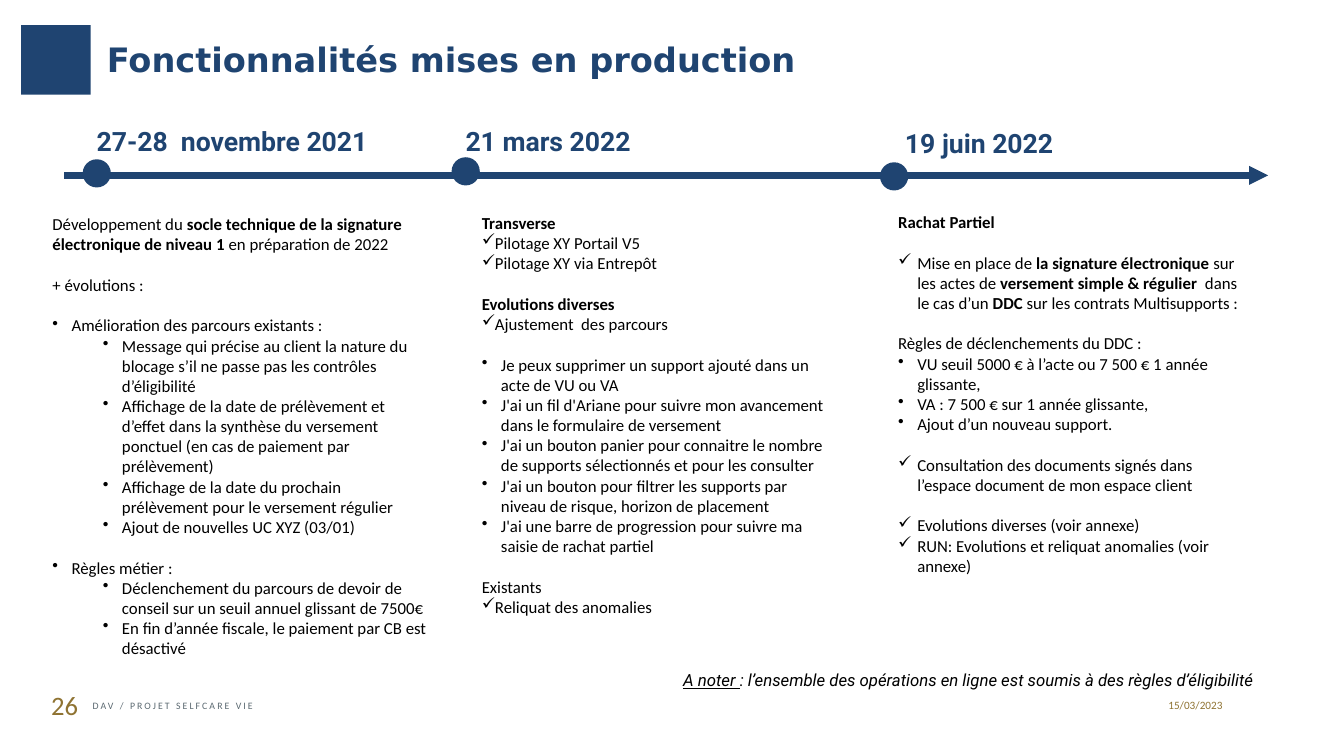
from dataclasses import dataclass

from lxml import etree
from pptx import Presentation
from pptx.dml.color import RGBColor
from pptx.enum.shapes import MSO_CONNECTOR as Conn, MSO_SHAPE as Shape
from pptx.enum.text import MSO_ANCHOR as Anchor, MSO_AUTO_SIZE as Fit, PP_ALIGN as Align
from pptx.oxml.ns import qn
from pptx.util import Inches, Pt

NAVY, GOLD, GREY, BLACK = "1F4471", "8F7332", "5B6971", "000000"
BODY, ACCENT = "Calibri", "Roboto"
CELL = 0.1  # grid cell in inches
COLS, ROWS = 133.33, 75
LINE_GAP = Pt(14.6)  # one empty body line
DOT = 2.8
AXIS = 17.4
TICK, BULLET = "✓", "•"


@dataclass
class Box:
    left: float
    top: float
    width: float
    height: float


@dataclass
class Line:
    text: str  # ** toggles bold
    bullet: str = ""
    left: float = 1.9
    hang: float = 1.9
    gap: bool = False


@dataclass
class Milestone:
    date: str
    date_box: Box
    dot_left: float
    dot_top: float
    body_box: Box
    lines: list[Line]


def g(cells: float) -> int:
    return Inches(cells * CELL)


def color(value: str) -> RGBColor:
    return RGBColor.from_string(value)


def place(sp, box: Box) -> None:
    sp.left, sp.top, sp.width, sp.height = g(box.left), g(box.top), g(box.width), g(box.height)


def style(p, size: float, face: str, ink: str, bold: bool = False) -> None:
    f = p.font
    f.size, f.name, f.bold = Pt(size), face, bold
    f.color.rgb = color(ink)


def frame(sp, dx: float, dy: float, anchor=Anchor.TOP):
    tf = sp.text_frame
    tf.word_wrap, tf.auto_size, tf.vertical_anchor = True, Fit.NONE, anchor
    tf.margin_left = tf.margin_right = g(dx)
    tf.margin_top = tf.margin_bottom = g(dy)
    return tf


def add_text(s, box: Box, dx: float = 1, dy: float = 0.5, anchor=Anchor.TOP):
    sp = s.shapes.add_textbox(g(box.left), g(box.top), g(box.width), g(box.height))
    return frame(sp, dx, dy, anchor)


def add_label(s, box: Box, text: str, size: float, face: str, ink: str, bold=False, **kw):
    p = add_text(s, box, **kw).paragraphs[0]
    p.add_run().text = text
    style(p, size, face, ink, bold)
    return p


def add_solid(s, kind, box: Box) -> None:
    sp = s.shapes.add_shape(kind, g(box.left), g(box.top), g(box.width), g(box.height))
    sp.shadow.inherit = False
    sp.fill.solid()
    sp.fill.fore_color.rgb = color(NAVY)
    sp.line.fill.background()


def add_body(s, box: Box, lines: list[Line]) -> None:
    tf = add_text(s, box, 1.8, 0.9)
    for i, line in enumerate(lines):
        p = tf.add_paragraph() if i else tf.paragraphs[0]
        if line.gap:
            p.space_before = LINE_GAP
        for j, part in enumerate(line.text.split("**")):
            if part:
                r = p.add_run()
                r.text = part
                if j % 2:
                    r.font.bold = True
        style(p, 12, BODY, BLACK)
        if line.bullet:
            pPr = p._p.get_or_add_pPr()
            pPr.set("marL", str(g(line.left)))
            pPr.set("indent", str(-g(line.hang)))
            bu = etree.Element(qn("a:buChar"), char=line.bullet)
            pPr.find(qn("a:defRPr")).addprevious(bu)


def dot(text: str, gap: bool = False) -> Line:
    return Line(text, BULLET, gap=gap)


def sub(text: str) -> Line:
    return Line(text, BULLET, left=6.9)


def tick(text: str, gap: bool = False) -> Line:
    return Line(text, TICK, gap=gap)


def flush_tick(text: str) -> Line:
    return Line(text, TICK, left=0, hang=3.8)


MILESTONES = [
    Milestone("27-28  novembre 2021", Box(8.6, 11.9, 36.5, 4.2), 8.2, 15.8, Box(3.4, 20.3, 40.9, 46.2), [
        Line("Développement du **socle technique de la signature électronique de niveau 1 **"
             "en préparation de 2022"),
        Line("+ évolutions :", gap=True),
        dot("Amélioration des parcours existants :", gap=True),
        sub("Message qui précise au client la nature du blocage s’il ne passe pas les contrôles d’éligibilité"),
        sub("Affichage de la date de prélèvement et d’effet dans la synthèse du versement ponctuel "
            "(en cas de paiement par prélèvement)"),
        sub("Affichage de la date du prochain prélèvement pour le versement régulier"),
        sub("Ajout de nouvelles UC XYZ (03/01)"),
        dot("Règles métier :", gap=True),
        sub("Déclenchement du parcours de devoir de conseil sur un seuil annuel glissant de 7500€"),
        sub("En fin d’année fiscale, le paiement par CB est désactivé"),
    ]),
    Milestone("21 mars 2022", Box(45.2, 11.9, 32.2, 4.2), 44.8, 15.6, Box(46, 20.2, 38.3, 42.2), [
        Line("**Transverse**"),
        flush_tick("Pilotage XY Portail V5"),
        flush_tick("Pilotage XY via Entrepôt"),
        Line("**Evolutions diverses**", gap=True),
        flush_tick("Ajustement  des parcours"),
        dot("Je peux supprimer un support ajouté dans un acte de VU ou VA", gap=True),
        dot("J'ai un fil d'Ariane pour suivre mon avancement dans le formulaire de versement"),
        dot("J'ai un bouton panier pour connaitre le nombre de supports sélectionnés et pour les consulter"),
        dot("J'ai un bouton pour filtrer les supports par niveau de risque, horizon de placement"),
        dot("J'ai une barre de progression pour suivre ma saisie de rachat partiel"),
        Line("Existants", gap=True),
        flush_tick("Reliquat des anomalies"),
    ]),
    Milestone("19 juin 2022", Box(88.8, 12.1, 38.7, 4.2), 87.3, 16.1, Box(87.3, 20.1, 38.3, 42.2), [
        Line("**Rachat Partiel**"),
        tick("Mise en place de **la signature électronique **sur les actes de "
             "**versement simple & régulier  **dans le cas d’un **DDC** sur les contrats Multisupports :",
             gap=True),
        Line("Règles de déclenchements du DDC :", gap=True),
        dot("VU seuil 5000 € à l’acte ou 7 500 € 1 année glissante,"),
        dot("VA : 7 500 € sur 1 année glissante,"),
        dot("Ajout d’un nouveau support."),
        tick("Consultation des documents signés dans l’espace document de mon espace client", gap=True),
        tick("Evolutions diverses (voir annexe)", gap=True),
        tick("RUN: Evolutions et reliquat anomalies (voir annexe)"),
    ]),
]


def main() -> None:
    prs = Presentation()
    prs.slide_width, prs.slide_height = g(COLS), g(ROWS)
    s = prs.slides.add_slide(prs.slide_layouts[5])

    # Title and its square
    add_solid(s, Shape.RECTANGLE, Box(2.1, 2.5, 6.9, 6.9))
    title = s.shapes.title
    place(title, Box(9.3, 2.4, 101.3, 6.9))
    p = frame(title, 1.3, 0.7, Anchor.MIDDLE).paragraphs[0]
    p.add_run().text = "Fonctionnalités mises en production"
    p.alignment = Align.LEFT
    style(p, 24, "DejaVu Sans", NAVY, True)

    # Timeline arrow
    axis = s.shapes.add_connector(Conn.STRAIGHT, g(6.4), g(AXIS), g(125.8), g(AXIS))
    axis.line.width = Pt(4.5)
    axis.line.color.rgb = color(NAVY)
    etree.SubElement(axis.line._get_or_add_ln(), qn("a:tailEnd"), type="triangle")
    etree.SubElement(axis._element.spPr, qn("a:effectLst"))

    # Milestones
    for m in MILESTONES:
        add_solid(s, Shape.OVAL, Box(m.dot_left, m.dot_top, DOT, DOT))
        add_label(s, m.date_box, m.date, 19, ACCENT, NAVY, True)
        add_body(s, m.body_box, m.lines)

    # Closing remark
    p = add_label(s, Box(2.7, 66, 122.7, 3), "A noter ", 12, ACCENT, BLACK)
    p.runs[0].font.underline = True
    p.add_run().text = ": l’ensemble des opérations en ligne est soumis à des règles d’éligibilité"
    p.font.italic = True
    p.alignment = Align.RIGHT

    # Footer
    add_label(s, Box(4.1, 67.9, 5.9, 4), "26", 19, BODY, GOLD)
    p = add_label(s, Box(9.2, 68, 103.1, 4), "DAV / PROJET SELFCARE VIE", 7, BODY, GREY,
                  dx=0, dy=0, anchor=Anchor.MIDDLE)
    p.runs[0].font._element.set("spc", "150")
    p = add_label(s, Box(115.7, 69.1, 5.8, 1.7), "15/03/2023", 8, BODY, GOLD,
                  dx=0, dy=0, anchor=Anchor.MIDDLE)
    p.alignment = Align.CENTER

    prs.save("out.pptx")


if __name__ == "__main__":
    main()
